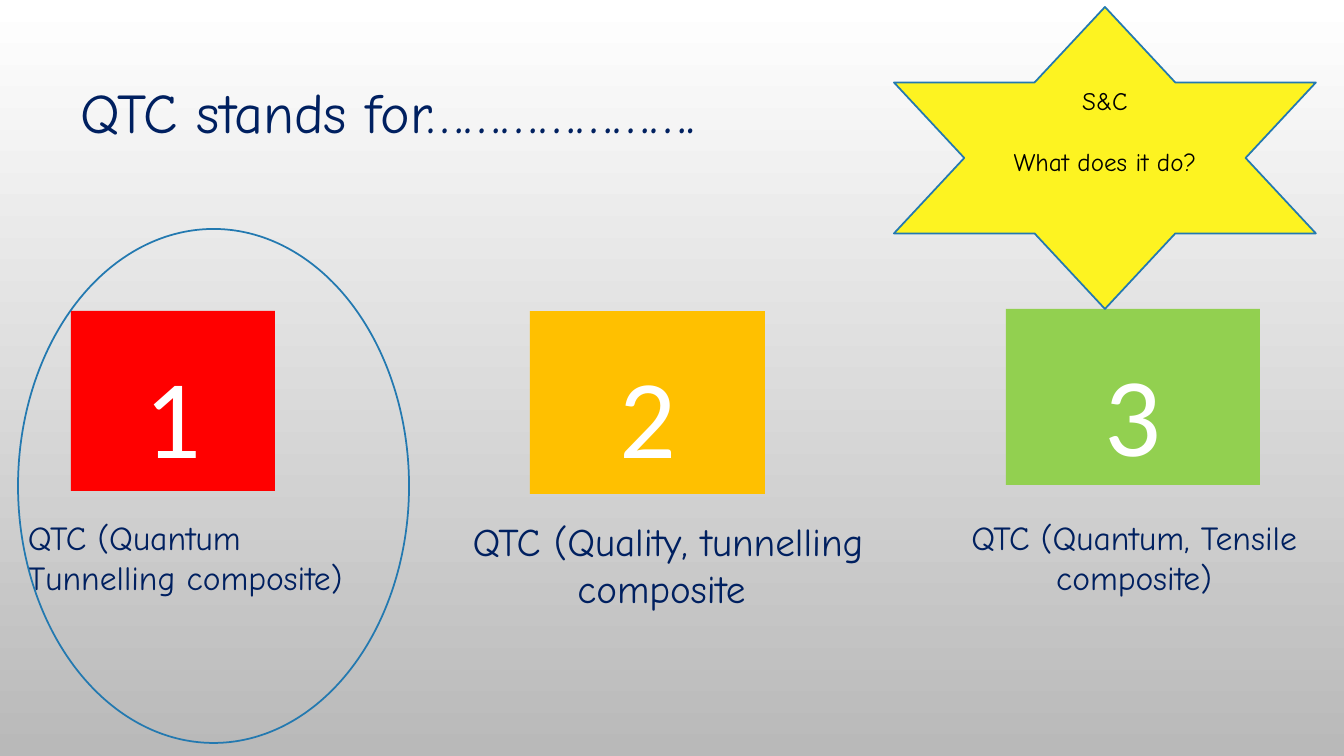
from pptx import Presentation
from pptx.dml.color import RGBColor as RGB
from pptx.enum.shapes import MSO_SHAPE as Kind
from pptx.enum.text import MSO_ANCHOR as Anchor, PP_ALIGN as Align
from pptx.util import Emu, Pt

TITLE = ("QTC stands for………………….", (71, 73, 1155, 78))
TILES = [
    ("1", "red", (71, 311, 204, 180)),
    ("2", "amber", (530, 311, 235, 183)),
    ("3", "green", (1006, 309, 254, 176)),
]
# text, size, alignment, box
ANSWERS = [
    ("QTC (Quality, tunnelling composite ", "large", Align.CENTER, (444, 512, 448, 105)),
    ("QTC (Quantum Tunnelling composite)", "answer", Align.LEFT, (18, 512, 366, 92)),
    ("QTC (Quantum, Tensile composite)", "answer", Align.CENTER, (951, 512, 366, 92)),
]
RING = (18, 229, 391, 514)
STAR = (["S&C", "What does it do?"], (894, 7, 422, 302))

THEME = {
    "color": {
        "red": "FF0000", "amber": "FFC000", "green": "92D050", "yellow": "FDF321",
        "navy": "002060", "white": "FFFFFF", "black": "000000", "gray": "B9B9B9",
        "line": "2379B0",
    },
    "size": {"digit": 80, "title": 40, "large": 28, "answer": 24, "star": 18},
    "font": {"plain": "Calibri", "comic": "Comic Neue"},
}
PAGE = (1344, 756)
PX = 914400 / 100.8


def emu(px):
    return Emu(round(px * PX))


def tint(name):
    return RGB.from_string(THEME["color"][name])


def write(shape, lines, size, color="navy", font="comic", align=Align.LEFT, top=5, gap=0):
    """Fill the shape with one paragraph per line, gap points apart."""
    frame = shape.text_frame
    frame.word_wrap = True
    frame.vertical_anchor = Anchor.TOP
    frame.margin_top = emu(top)
    for n, line in enumerate(lines):
        para = frame.add_paragraph() if n else frame.paragraphs[0]
        para.alignment = align
        if n and gap:
            para.space_before = Pt(gap)
        run = para.add_run()
        run.text = line
        run.font.name = THEME["font"][font]
        run.font.size = Pt(THEME["size"][size])
        run.font.color.rgb = tint(color)


def label(slide, text, box, size, **form):
    write(slide.shapes.add_textbox(*map(emu, box)), [text], size, **form)


def draw(slide, kind, box, fill=None, line=None):
    shape = slide.shapes.add_shape(kind, *map(emu, box))
    shape.shadow.inherit = False
    if fill:
        shape.fill.solid()
        shape.fill.fore_color.rgb = tint(fill)
    else:
        shape.fill.background()
    if line:
        shape.line.color.rgb = tint(line)
        shape.line.width = Pt(1.25)
    else:
        shape.line.fill.background()
    return shape


def shade(slide):
    """Fade the background from white at the top to gray."""
    fill = slide.background.fill
    fill.gradient()
    fill.gradient_angle = 270
    for stop, name, at in zip(fill.gradient_stops, ("white", "gray"), (0, 1)):
        stop.color.rgb = tint(name)
        stop.position = at


def main():
    deck = Presentation()
    deck.slide_width, deck.slide_height = map(emu, PAGE)
    slide = deck.slides.add_slide(deck.slide_layouts[6])
    shade(slide)

    for digit, fill, box in TILES:
        tile = draw(slide, Kind.RECTANGLE, box, fill)
        write(tile, [digit], "digit", color="white", font="plain", align=Align.CENTER, top=36)

    label(slide, *TITLE, "title")
    for text, size, align, box in ANSWERS:
        label(slide, text, box, size, align=align)

    draw(slide, Kind.OVAL, RING, line="line")
    lines, box = STAR
    star = draw(slide, Kind.STAR_6_POINT, box, "yellow", "line")
    write(star, lines, "star", color="black", align=Align.CENTER, top=3, gap=22)
    deck.save("out.pptx")


if __name__ == "__main__":
    main()
